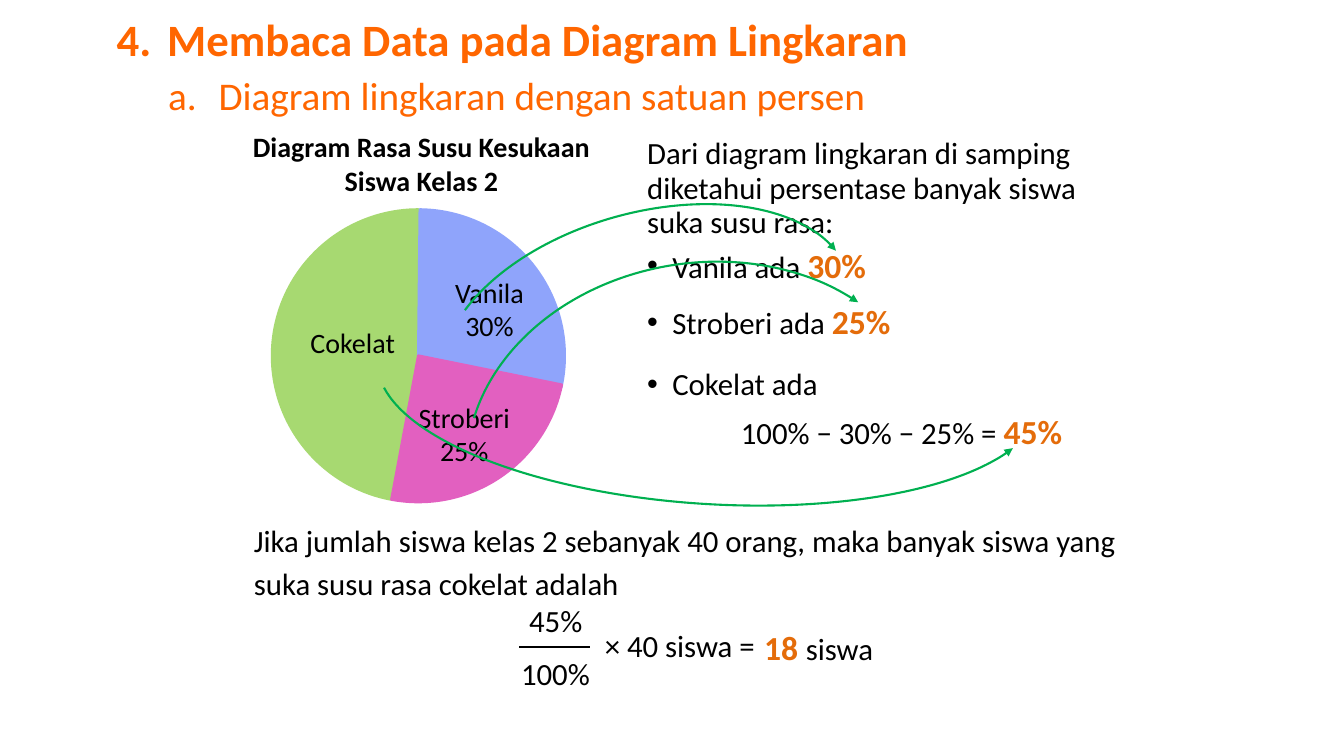
from collections import namedtuple
from dataclasses import dataclass

from lxml.etree import SubElement
from pptx import Presentation
from pptx.dml.color import RGBColor
from pptx.enum.shapes import MSO_CONNECTOR, MSO_SHAPE
from pptx.enum.text import MSO_AUTO_SIZE, PP_ALIGN
from pptx.oxml.ns import qn
from pptx.util import Inches, Pt

Box = namedtuple("Box", "left top width height")


@dataclass(frozen=True)
class Theme:
    font: str = "Calibri"
    ink: str = "000000"
    title: str = "FF6600"
    accent: str = "E46C0A"
    arrow: str = "00B050"
    green: str = "A7D971"
    blue: str = "8FA4FB"
    pink: str = "E260C0"
    head: int = 32
    sub: int = 28
    key: int = 24
    body: int = 22
    label: int = 20


THEME = Theme()


def color(code):
    return RGBColor.from_string(code)


def within(box, left, top, width, height):
    return Box(box.left + left, box.top + top, width, height)


def place(box):
    return [Inches(side) for side in box]


def style(font, size, code, bold=False):
    font.name = THEME.font
    font.size = Pt(size)
    font.bold = bold
    font.color.rgb = color(code)


def write(slide, box, *lines, size=THEME.body, code=THEME.ink, bold=False,
          align=PP_ALIGN.LEFT, space=None, bullet=False, tab=None):
    frame = slide.shapes.add_textbox(*place(box)).text_frame
    frame.word_wrap = True
    frame.auto_size = MSO_AUTO_SIZE.SHAPE_TO_FIT_TEXT
    for index, line in enumerate(lines):
        para = frame.add_paragraph() if index else frame.paragraphs[0]
        para.alignment = align
        if space:
            para.line_spacing = space
        props = para._p.get_or_add_pPr()
        if bullet:
            props.set("marL", str(Inches(0.25)))
            props.set("indent", str(Inches(-0.25)))
            SubElement(props, qn("a:buFont"), typeface="Arial")
            SubElement(props, qn("a:buChar"), char="•")
        if tab:
            stops = SubElement(props, qn("a:tabLst"))
            SubElement(stops, qn("a:tab"), pos=str(Inches(tab)), algn="l")
        style(para.font, size, code, bold)
        for part in line.split("*"):
            if part:
                para.add_run().text = part
        if "*" in line:
            spot = line.split("*").index("") if line.startswith("*") else 1
            style(para.runs[spot].font, THEME.key, THEME.accent, True)


def curve(slide, kind, box, start, end):
    shape = slide.shapes.add_shape(kind, *place(box))
    shape.shadow.inherit = False
    shape.adjustments[0] = start * 0.6
    shape.adjustments[1] = end * 0.6
    return shape


def titles(slide, box):
    write(slide, within(box, 0, 0, 8.3, 0.64),
          "4.\tMembaca Data pada Diagram Lingkaran",
          size=THEME.head, code=THEME.title, bold=True, tab=0.5)
    write(slide, within(box, 0.51, 0.59, 7.19, 0.57),
          "a.\tDiagram lingkaran dengan satuan persen",
          size=THEME.sub, code=THEME.title, tab=0.5)


def diagram(slide, box):
    write(slide, within(box, 0, 0, 3.9, 0.77),
          "Diagram Rasa Susu Kesukaan Siswa Kelas 2",
          size=THEME.label, bold=True, align=PP_ALIGN.CENTER)
    disc = within(box, 0.47, 0.84, 2.9, 2.9)
    for code, start, end in ((THEME.green, 100.86, 270),
                             (THEME.blue, 270.61, 12.47),
                             (THEME.pink, 11.46, 100.57)):
        slice = curve(slide, MSO_SHAPE.PIE, disc, start, end)
        slice.fill.solid()
        slice.fill.fore_color.rgb = color(code)
        slice.line.color.rgb = color(code)
        slice.line.width = Pt(2)
    write(slide, within(box, 0.75, 1.94, 1.25, 0.44), "Cokelat", size=THEME.label)
    for left, top, name, share in ((2, 1.44, "Vanila", "30%"),
                                   (1.75, 2.68, "Stroberi", "25%")):
        write(slide, within(box, left, top, 1.25, 0.77), name, share,
              size=THEME.label, align=PP_ALIGN.CENTER)


def reading(slide, box):
    intro = ("Dari diagram lingkaran di samping",
             "diketahui persentase banyak siswa",
             "suka susu rasa:")
    for row, line in enumerate(intro):
        write(slide, within(box, 0, row * 0.34, box.width, 0.47), line)
    write(slide, within(box, 0, 1.1, 3.54, 0.5), "Vanila ada *30%", bullet=True)
    write(slide, within(box, 0, 1.66, 3.71, 0.5), "Stroberi ada *25%", bullet=True)
    write(slide, within(box, 0, 2.2, box.width, 0.53), "Cokelat ada",
          bullet=True, space=1.25)
    write(slide, within(box, 0.93, 2.75, 3.79, 0.5), "100% − 30% − 25% = *45%")


def result(slide, box):
    lines = ("Jika jumlah siswa kelas 2 sebanyak 40 orang, maka banyak siswa yang",
             "suka susu rasa cokelat adalah")
    for row, line in enumerate(lines):
        write(slide, within(box, 0, row * 0.42, box.width, 0.53), line, space=1.25)
    write(slide, within(box, 3.48, 1.13, 1.92, 0.47), "× 40 siswa =")
    write(slide, within(box, 2.73, 0.88, 0.83, 0.47), "45%")
    write(slide, within(box, 2.65, 1.41, 1, 0.47), "100%")
    left, top = box.left + 2.73, box.top + 1.38
    bar = slide.shapes.add_connector(
        MSO_CONNECTOR.STRAIGHT, *place((left, top, left + 0.7, top)))
    SubElement(bar._element.spPr, qn("a:effectLst"))
    bar.line.color.rgb = color(THEME.ink)
    bar.line.width = Pt(1)
    write(slide, within(box, 5.06, 1.13, 1.42, 0.5), "*18 *siswa")


def arrows(slide, box):
    for spot, turn, start, end, tip in (
            ((0, 0.47, 6.59, 2.42), 3.7, 8.6, 175.3, "headEnd"),
            ((0.88, 0.5, 4.66, 3.73), 350.7, 197.56, 325.93, "tailEnd"),
            ((0.59, 0, 4.18, 2.42), 344.3, 203.34, 351.7, "tailEnd")):
        arc = curve(slide, MSO_SHAPE.ARC, within(box, *spot), start, end)
        arc.rotation = turn
        arc.fill.background()
        arc.line.color.rgb = color(THEME.arrow)
        arc.line.width = Pt(1.5)
        SubElement(arc.line._get_or_add_ln(), qn("a:" + tip), type="triangle")


def main():
    deck = Presentation()
    deck.slide_width = Inches(13.33)
    deck.slide_height = Inches(7.5)
    slide = deck.slides.add_slide(deck.slide_layouts[6])
    titles(slide, Box(1.06, 0.07, 8.3, 1.16))
    diagram(slide, Box(2.23, 1.24, 3.9, 3.74))
    reading(slide, Box(6.32, 1.28, 5.35, 3.25))
    result(slide, Box(2.42, 5.04, 9.42, 1.88))
    arrows(slide, Box(3.74, 2.11, 6.59, 4.23))
    deck.save("out.pptx")


if __name__ == "__main__":
    main()
